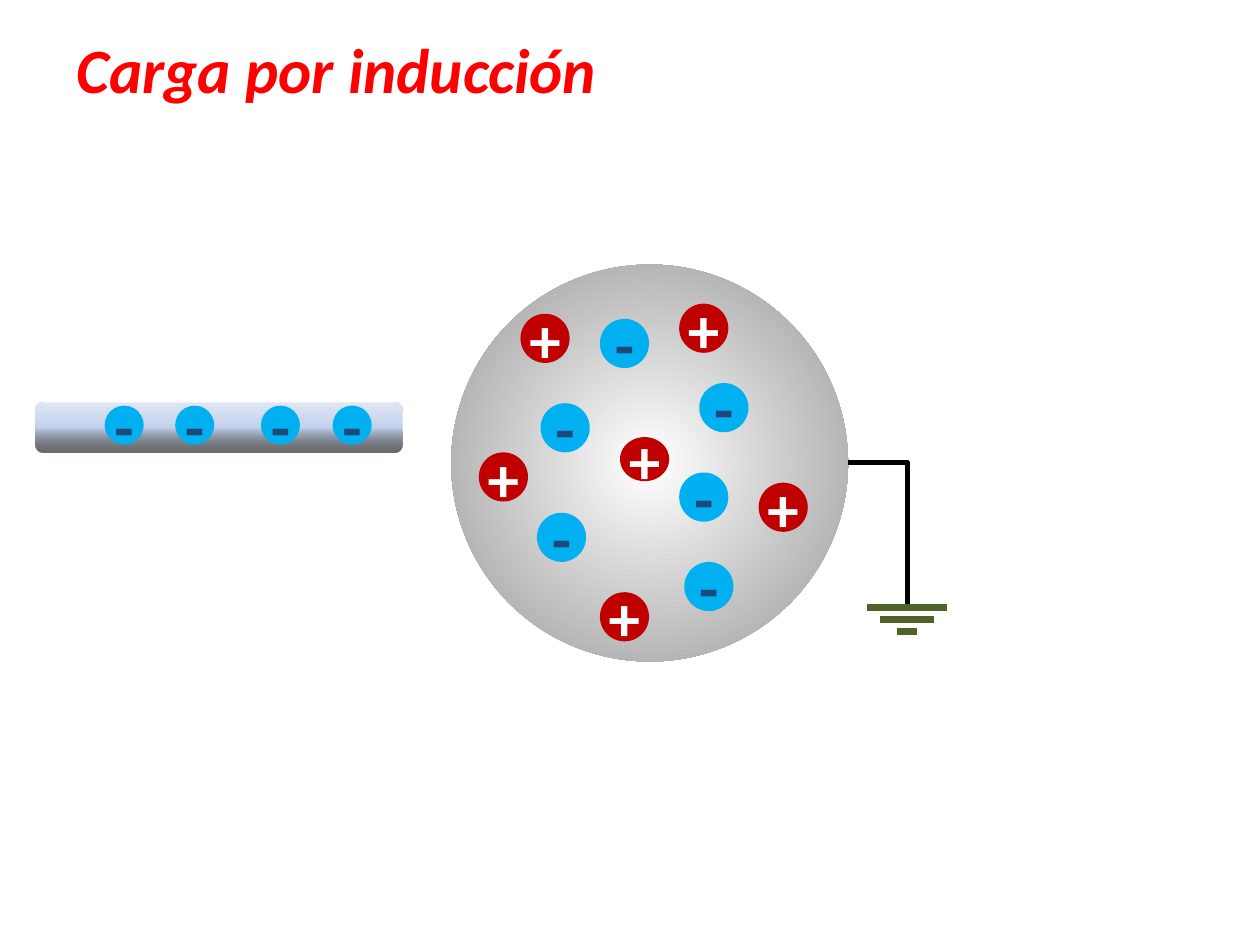
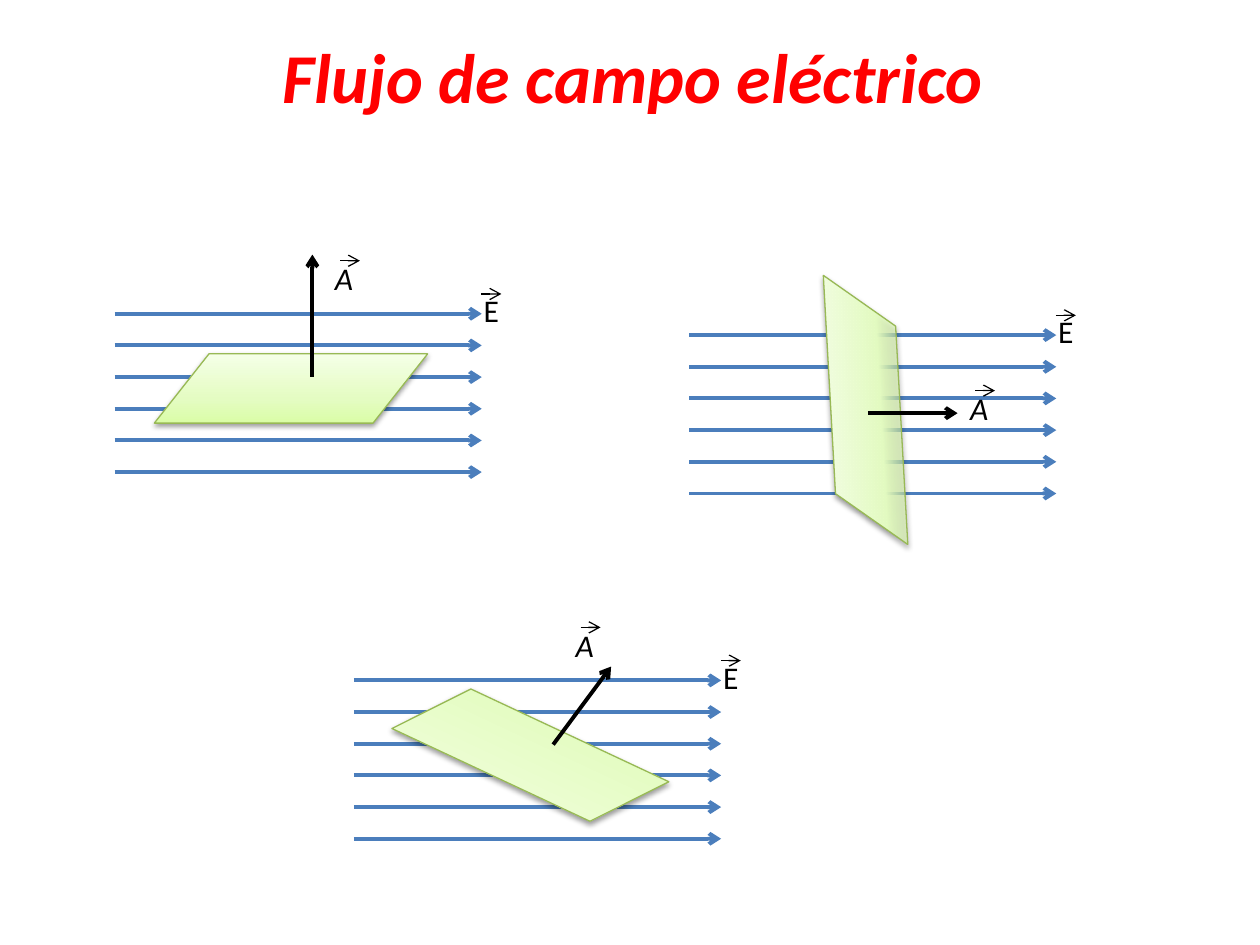
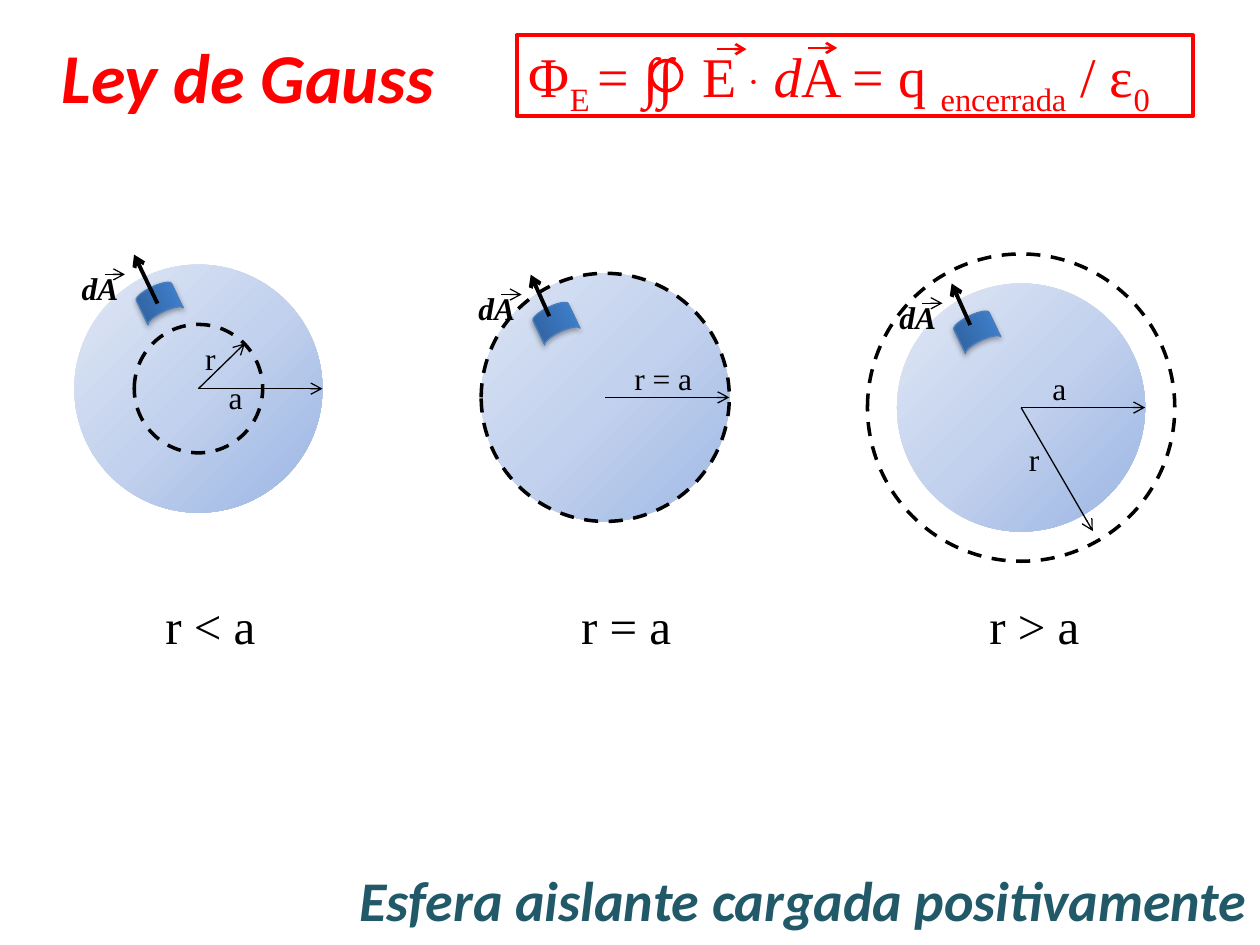
from lxml import etree
from pptx import Presentation
from pptx.dml.color import RGBColor
from pptx.enum.dml import MSO_LINE
from pptx.enum.shapes import MSO_CONNECTOR, MSO_SHAPE
from pptx.enum.text import MSO_ANCHOR, PP_ALIGN
from pptx.oxml.ns import qn
from pptx.util import Pt

OVAL, RECT = MSO_SHAPE.OVAL, MSO_SHAPE.RECTANGLE
ROD, PLATE = MSO_SHAPE.FLOWCHART_ALTERNATE_PROCESS, MSO_SHAPE.FLOWCHART_DATA
PATCH = MSO_SHAPE.FLOWCHART_STORED_DATA
STRAIGHT, ELBOW = MSO_CONNECTOR.STRAIGHT, MSO_CONNECTOR.ELBOW
LEFT, CENTER, RIGHT = PP_ALIGN.LEFT, PP_ALIGN.CENTER, PP_ALIGN.RIGHT
TOP, MIDDLE = MSO_ANCHOR.TOP, MSO_ANCHOR.MIDDLE

COLORS = {
    "red": "FF0000", "black": "000000", "white": "FFFFFF", "navy": "1F497D",
    "electron": "00B0F0", "proton": "C00000", "ground": "4F6228",
    "field": "4B7EBC", "plate_edge": "98B955", "teal": "215968",
}
SANS, SERIF = "Calibri", "Times New Roman"
METAL = [(0, "FFFFFF", 100), (100, "979797", 100)]
GLASS = [(0, "000000", 58), (50, "C2D1ED", 100), (100, "E1E8F5", 100)]
INSULATOR = [(0, "9AB5E4", 100), (50, "C2D1ED", 100), (100, "E1E8F5", 100)]
SURFACE = [(0, "2F5F99", 100), (80, "3D7CC7", 100), (100, "3A7CCB", 100)]


def plate_stops(alpha):
    return [(0, "DAFDA7", alpha), (35, "E4FCC2", 100), (100, "F5FFE7", 100)]


def rgb(name):
    return RGBColor.from_string(COLORS[name])


def sub(parent, tag, **attrs):
    return etree.SubElement(parent, qn(tag), {k: str(v) for k, v in attrs.items()})


def add_gradient(sp, stops, angle=None, focus=None):
    geom = sp._element.spPr.find(qn("a:prstGeom"))
    grad = etree.Element(qn("a:gradFill"), {"rotWithShape": "1"})
    gs_list = sub(grad, "a:gsLst")
    for pos, color, alpha in stops:
        clr = sub(sub(gs_list, "a:gs", pos=pos * 1000), "a:srgbClr", val=color)
        if alpha < 100:
            sub(clr, "a:alpha", val=alpha * 1000)
    if focus:
        rect = dict(zip("ltrb", (v * 1000 for v in focus)))
        sub(sub(grad, "a:path", path="circle"), "a:fillToRect", **rect)
    else:
        sub(grad, "a:lin", ang=angle * 60000, scaled=0)
    geom.addnext(grad)


def add_soft_shadow(sp, alpha):
    effects = sp._element.spPr.find(qn("a:effectLst"))
    shadow = sub(effects, "a:outerShdw", blurRad=Pt(3.1), dist=Pt(1.6),
                 dir=5400000, rotWithShape=0)
    sub(sub(shadow, "a:srgbClr", val=COLORS["black"]), "a:alpha", val=alpha * 1000)


def add_shape(s, kind, x, y, w, h, fill=None, line=None, width=0.75, dash=False, rot=0):
    sp = s.shapes.add_shape(kind, Pt(x), Pt(y), Pt(w), Pt(h))
    sp.shadow.inherit = False
    sp.rotation = rot
    if isinstance(fill, dict):
        add_gradient(sp, **fill)
    elif fill:
        sp.fill.solid()
        sp.fill.fore_color.rgb = rgb(fill)
    else:
        sp.fill.background()
    if line:
        sp.line.color.rgb = rgb(line)
        sp.line.width = Pt(width)
        if dash:
            sp.line.dash_style = MSO_LINE.DASH
    else:
        sp.line.fill.background()
    return sp


def add_run(p, text, size, font, color, bold=False, italic=False, base=0, spacing=0):
    r = p.add_run()
    r.text = text
    r.font.size, r.font.name = Pt(size), font
    r.font.bold, r.font.italic = bold, italic
    r.font.color.rgb = rgb(color)
    if base:
        r._r.get_or_add_rPr().set("baseline", str(base * 1000))
    if spacing:
        r._r.get_or_add_rPr().set("spc", str(spacing * 100))


def add_text(s, x, y, w, h, text, size, font=SANS, color="black", align=LEFT,
             bold=False, italic=False, fill=None):
    sp = s.shapes.add_textbox(Pt(x), Pt(y), Pt(w), Pt(h))
    if fill:
        sp.fill.solid()
        sp.fill.fore_color.rgb = rgb(fill)
    tf = sp.text_frame
    tf.word_wrap = True
    p = tf.paragraphs[0]
    p.alignment = align
    add_run(p, text, size, font, color, bold, italic)


def add_line(s, x1, y1, x2, y2, color="black", width=0.75, arrow=True, kind=STRAIGHT):
    c = s.shapes.add_connector(kind, Pt(x1), Pt(y1), Pt(x2), Pt(y2))
    c.line.color.rgb = rgb(color)
    c.line.width = Pt(width)
    if arrow:
        sub(c.line._get_or_add_ln(), "a:tailEnd", type="arrow")
    sub(c._element.spPr, "a:effectLst")
    return c


def add_title(s, x, y, w, text, size=40, align=LEFT):
    add_text(s, x, y, w, size * 1.4, text, size, color="red", align=align,
             bold=True, italic=True)


def add_ion(s, x, y, sign, w=28.1, h=28.1):
    fill, color = ("proton", "white") if sign == "+" else ("electron", "navy")
    sp = add_shape(s, OVAL, x, y, w, h, fill)
    tf = sp.text_frame
    tf.margin_left = tf.margin_top = tf.margin_right = tf.margin_bottom = Pt(3.6)
    tf.word_wrap = False
    tf.vertical_anchor = MIDDLE
    p = tf.paragraphs[0]
    p.alignment = CENTER
    add_run(p, sign, 36, SANS, color, bold=True)


def metal_sphere(s, x, y, d):
    add_shape(s, OVAL, x, y, d, d, dict(stops=METAL, focus=(50, 50, 50, 50)))
    electrons = [(85, 31), (51.1, 79.2), (130.3, 118.8), (49, 141.8),
                 (141.8, 67.7), (133.2, 169.9)]
    protons = [(130.3, 22.3), (39.6, 28.1), (15.8, 107.3), (175.7, 124.6), (85, 187.2)]
    for sign, places in (("-", electrons), ("+", protons)):
        for dx, dy in places:
            add_ion(s, x + dx, y + dy, sign)
    add_ion(s, x + 96.5, y + 98.6, "+", h=25.2)


def charged_rod(s, x, y, w, h):
    add_shape(s, ROD, x, y, w, h, dict(stops=GLASS, angle=270))
    for dx in (39.6, 79.9, 128.9, 169.9):
        add_ion(s, x + dx, y + 1.4, "-", 22.3, 22.3)


def ground_wire(s, x, y, w, h):
    wire = add_line(s, x, y, x + w, y + h, width=3, arrow=False, kind=ELBOW)
    wire._element.spPr.find(qn("a:prstGeom")).set("prst", "bentConnector2")
    for i, half in enumerate((22.7, 15.5, 5.8)):
        bar_y = y + h + 6.85 * i
        add_line(s, x + w - half, bar_y, x + w + half, bar_y, "ground", 4, arrow=False)


def vector_label(s, x, y, text, w, italic=False, fill=None, mark=(10, 4.3)):
    add_text(s, x, y, w, 28.8, text, 18, italic=italic, fill=fill)
    mx, my = x + mark[0], y + mark[1]
    add_line(s, mx, my, mx + 11.4, my)


def flux_diagram(s, x, y, rot, alpha, normal, label, label_fill=None):
    for i in range(6):
        line_y = y + 18.1 * i
        add_line(s, x, line_y, x + 209.8, line_y, "field", 2.25)
    plate = add_shape(s, PLATE, x + 22.7, y + 22.9, 156.2, 39.6,
                      dict(stops=plate_stops(alpha), angle=270), "plate_edge", rot=rot)
    add_soft_shadow(plate, 38)
    x1, y1, x2, y2 = normal
    add_line(s, x + x1, y + y1, x + x2, y + y2, width=2.25)
    vector_label(s, x + label[0], y + label[1], "A", 22.3, italic=True, fill=label_fill)
    vector_label(s, x + 203.8, y - 16.5, "E", 40, mark=(5.8, 5.2))


def gauss_formula(s, x, y, w, h):
    frame = add_shape(s, RECT, x, y, w, h, line="red", width=2.25)
    tf = frame.text_frame
    tf.word_wrap = False
    tf.vertical_anchor = TOP
    p = tf.paragraphs[0]
    p.alignment = LEFT
    parts = [
        ("Φ", {}), ("E ", {"base": -25}), ("= ∫∫", {}), (" ", {"spacing": 8}), ("E ", {}),
        ("•", {"size": 18, "base": 30}), (" ", {"base": -25, "spacing": 5}),
        ("d", {"italic": True}), ("A = q ", {}), ("encerrada", {"base": -25}),
        (" / ε", {}), ("0", {"base": -25}),
    ]
    for text, style in parts:
        add_run(p, text, **{"size": 32, "font": SERIF, "color": "red", **style})
    for dx, dy in ((114.5, 7.9), (166.3, 7.2)):
        add_line(s, x + dx, y + dy, x + dx + 16.9, y + dy, "red", 1.5)
    add_shape(s, OVAL, x + 77, y + 14.4, 17.3, 17.3, line="red", width=2)


def area_element(s, x, y, tail):
    patch = add_shape(s, PATCH, x, y, 18.5, 22.3, dict(stops=SURFACE, angle=270),
                      "field", rot=64.4)
    add_soft_shadow(patch, 35)
    add_line(s, x + tail[0], y + tail[1], x - 4.8, y - 15.8, width=2.25)
    add_text(s, x - 74.2, y - 11, 100, 28.8, "dA", 18, SERIF, align=CENTER,
             bold=True, italic=True)
    add_line(s, x - 21.6, y - 4.5, x - 10, y - 4.5)


def gauss_case(s, x, y, gauss_r, labels, patch, tail, caption, caption_x,
               radius_end=None, rot=0):
    d = 141.8
    cx, cy = x + d / 2, y + d / 2
    add_shape(s, OVAL, x, y, d, d,
              dict(stops=INSULATOR, focus=(100, 100, 0, 0)), rot=rot)
    add_shape(s, OVAL, cx - gauss_r, cy - gauss_r, 2 * gauss_r, 2 * gauss_r,
              line="black", width=2, dash=True)
    add_line(s, cx, cy, x + d, cy)
    if radius_end:
        add_line(s, cx, cy, cx + radius_end[0], cy + radius_end[1])
    for text, dx, dy, w in labels:
        add_text(s, cx + dx, cy + dy, w, 28.8, text, 18, SERIF, align=CENTER)
    area_element(s, x + patch[0], y + patch[1], tail)
    add_text(s, caption_x, 337, 96.5, 41, caption, 28, SERIF, align=CENTER)


def induction_slide(s):
    metal_sphere(s, 257.8, 151.2, 226.8)
    charged_rod(s, 20.2, 230.4, 209.5, 28.1)
    ground_wire(s, 484.6, 264.2, 33.8, 82.8)
    add_title(s, 36.7, 13.7, 668.9, "Carga por inducción", 36)


def flux_slide(s):
    add_title(s, 2.9, 15.8, 717.1, "Flujo de campo eléctrico", align=CENTER)
    flux_diagram(s, 65.5, 179.3, 0, 100, (113, 36, 113, -33.8), (118.8, -34.6), "white")
    flux_diagram(s, 202.3, 388.8, 205.1, 100, (113.8, 36.7, 146.9, -7.9),
                 (119.5, -34.6), "white")
    flux_diagram(s, 393.8, 191.5, 266.8, 24, (102.2, 44.6, 153.4, 44.6), (153.4, 27.4))


def gauss_slide(s):
    add_title(s, 28.1, 15.8, 288.7, "Ley de Gauss")
    gauss_formula(s, 295.2, 20.2, 386.6, 46.1)
    add_text(s, 2.9, 491, 717.1, 46.1, "Esfera aislante cargada positivamente", 32,
             color="teal", align=RIGHT, bold=True, italic=True)
    gauss_case(s, 42.5, 151.2, 36.7, [("r", -11.9, -32, 37.4), ("a", 2.5, -9.7, 37.4)],
               (38.9, 10.1), (8.6, 12.2), "r < a", 72, radius_end=(26.6, -25.9))
    gauss_case(s, 275, 156.2, 70.9, [("r = a", 2.5, -25.2, 61.2)],
               (33.1, 16.6), (5.8, 7.9), "r = a", 309.6, rot=11.6)
    gauss_case(s, 512.6, 162, 87.8, [("r", -11.2, 14.8, 37.4), ("a", 3.2, -25.6, 37.4)],
               (36, 15.8), (5.8, 7.9), "r > a", 542.9, radius_end=(41, 70.6))


def main():
    prs = Presentation()
    prs.slide_width, prs.slide_height = Pt(720), Pt(540)
    for build in (induction_slide, flux_slide, gauss_slide):
        build(prs.slides.add_slide(prs.slide_layouts[6]))
    prs.save("out.pptx")


if __name__ == "__main__":
    main()
